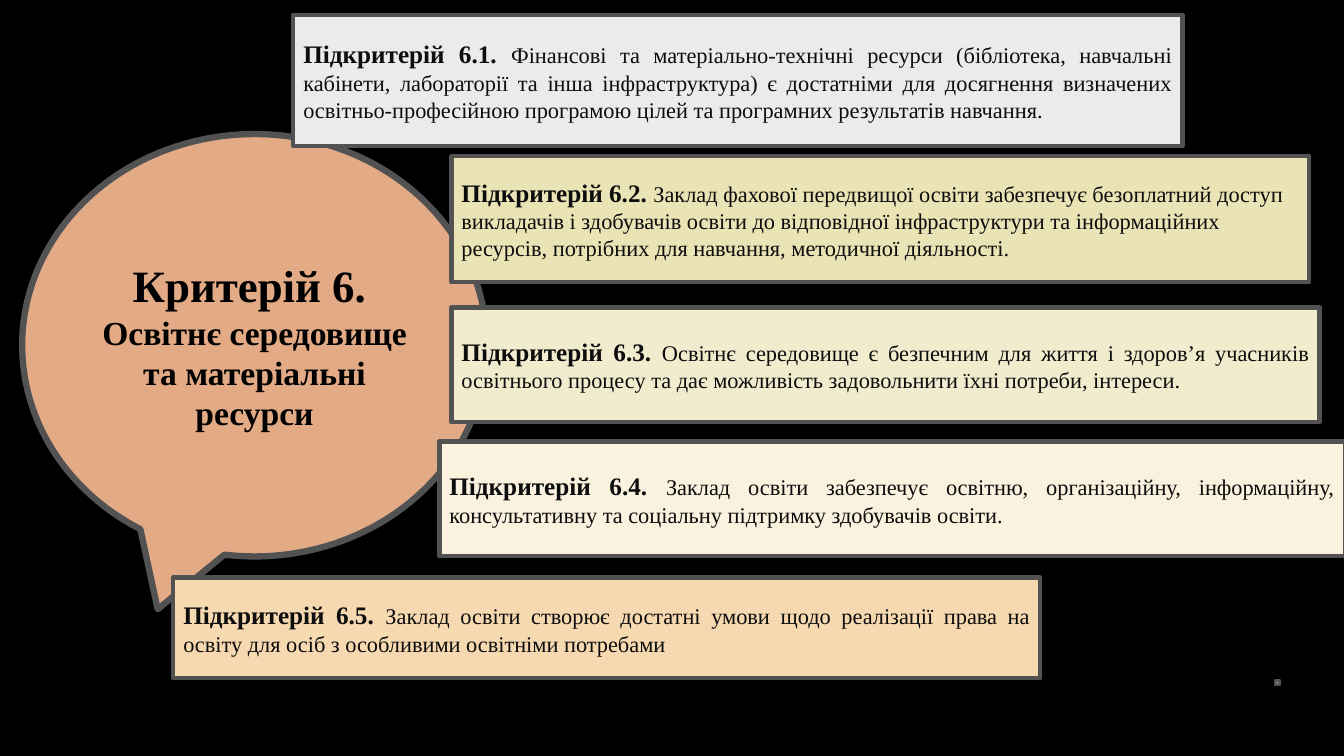
from pptx import Presentation
from pptx.dml.color import RGBColor
from pptx.enum.shapes import MSO_SHAPE
from pptx.enum.text import MSO_ANCHOR, PP_ALIGN
from pptx.util import Inches, Pt

COLORS = {
    "background": "000000", "outline": "525252", "dot": "6F6F6F",
    "callout": "E2AA85", "title": "000000", "body": "0D0D0D",
    "6.1": "EBEBEB", "6.2": "EAE3B5", "6.3": "F1ECCE",
    "6.4": "FAF2DF", "6.5": "F6D9B0",
}
FONT = "Times New Roman"

prs = Presentation()
prs.slide_width, prs.slide_height = Inches(13.33), Inches(7.5)
slide = prs.slides.add_slide(prs.slide_layouts[6])
slide.background.fill.solid()
slide.background.fill.fore_color.rgb = RGBColor.from_string(COLORS["background"])


def add_box(kind, box, color, line_width):
    """Add an outlined shape; box holds percentages of the slide's size."""
    left, top, width, height = box
    sp = slide.shapes.add_shape(
        kind,
        int(prs.slide_width * left / 100), int(prs.slide_height * top / 100),
        int(prs.slide_width * width / 100), int(prs.slide_height * height / 100))
    sp.shadow.inherit = False
    sp.fill.solid()
    sp.fill.fore_color.rgb = RGBColor.from_string(COLORS[color])
    sp.line.color.rgb = RGBColor.from_string(COLORS["outline"])
    sp.line.width = Pt(line_width)
    tf = sp.text_frame
    tf.word_wrap = True
    tf.vertical_anchor = MSO_ANCHOR.MIDDLE
    return tf


def add_run(p, text, size, bold, color, font=FONT):
    r = p.add_run()
    r.text = text
    r.font.name, r.font.size, r.font.bold = font, Pt(size), bold
    r.font.color.rgb = RGBColor.from_string(COLORS[color])


# Small square in the lower right corner
add_box(MSO_SHAPE.RECTANGLE, (94.88, 90, 0.38, 0.67), "dot", 1.5)

# Criterion callout
tf = add_box(MSO_SHAPE.OVAL_CALLOUT, (1.65, 17.73, 34.58, 55.87), "callout", 4.5)
p = tf.paragraphs[0]
p.alignment = PP_ALIGN.CENTER
add_run(p, "Критерій 6.", 32, True, "title")
add_run(p, " ", 28, False, "title", "Montserrat")
p = tf.add_paragraph()
p.alignment = PP_ALIGN.CENTER
add_run(p, "Освітнє середовище та матеріальні ресурси", 24, True, "title")

# Subcriteria, from back to front: number, box, alignment, text
subcriteria = [
    ("6.2", (33.6, 20.67, 63.83, 16.67), PP_ALIGN.LEFT,
     "Заклад фахової передвищої освіти забезпечує безоплатний доступ "
     "викладачів і здобувачів освіти до відповідної інфраструктури та "
     "інформаційних ресурсів, потрібних для навчання, методичної діяльності."),
    ("6.3", (33.6, 40.67, 64.58, 15.2), PP_ALIGN.JUSTIFY,
     "Освітнє середовище є безпечним для життя і здоров’я учасників "
     "освітнього процесу та дає можливість задовольнити їхні потреби, інтереси."),
    ("6.4", (32.7, 58.4, 67.35, 15.2), PP_ALIGN.JUSTIFY,
     "Заклад освіти забезпечує освітню, організаційну, інформаційну, "
     "консультативну та соціальну підтримку здобувачів освіти."),
    ("6.1", (21.83, 2, 66.15, 17.33), PP_ALIGN.JUSTIFY,
     "Фінансові та матеріально-технічні ресурси (бібліотека, навчальні "
     "кабінети, лабораторії та інша інфраструктура) є достатніми для "
     "досягнення визначених освітньо-професійною програмою цілей та "
     "програмних результатів навчання."),
    ("6.5", (12.9, 76.4, 64.5, 13.33), PP_ALIGN.JUSTIFY,
     "Заклад освіти створює достатні умови щодо реалізації права на "
     "освіту для осіб з особливими освітніми потребами"),
]
for number, box, alignment, text in subcriteria:
    p = add_box(MSO_SHAPE.RECTANGLE, box, number, 3).paragraphs[0]
    p.alignment = alignment
    add_run(p, f"Підкритерій {number}. ", 18, True, "body")
    add_run(p, text, 16, False, "body")

prs.save("out.pptx")
